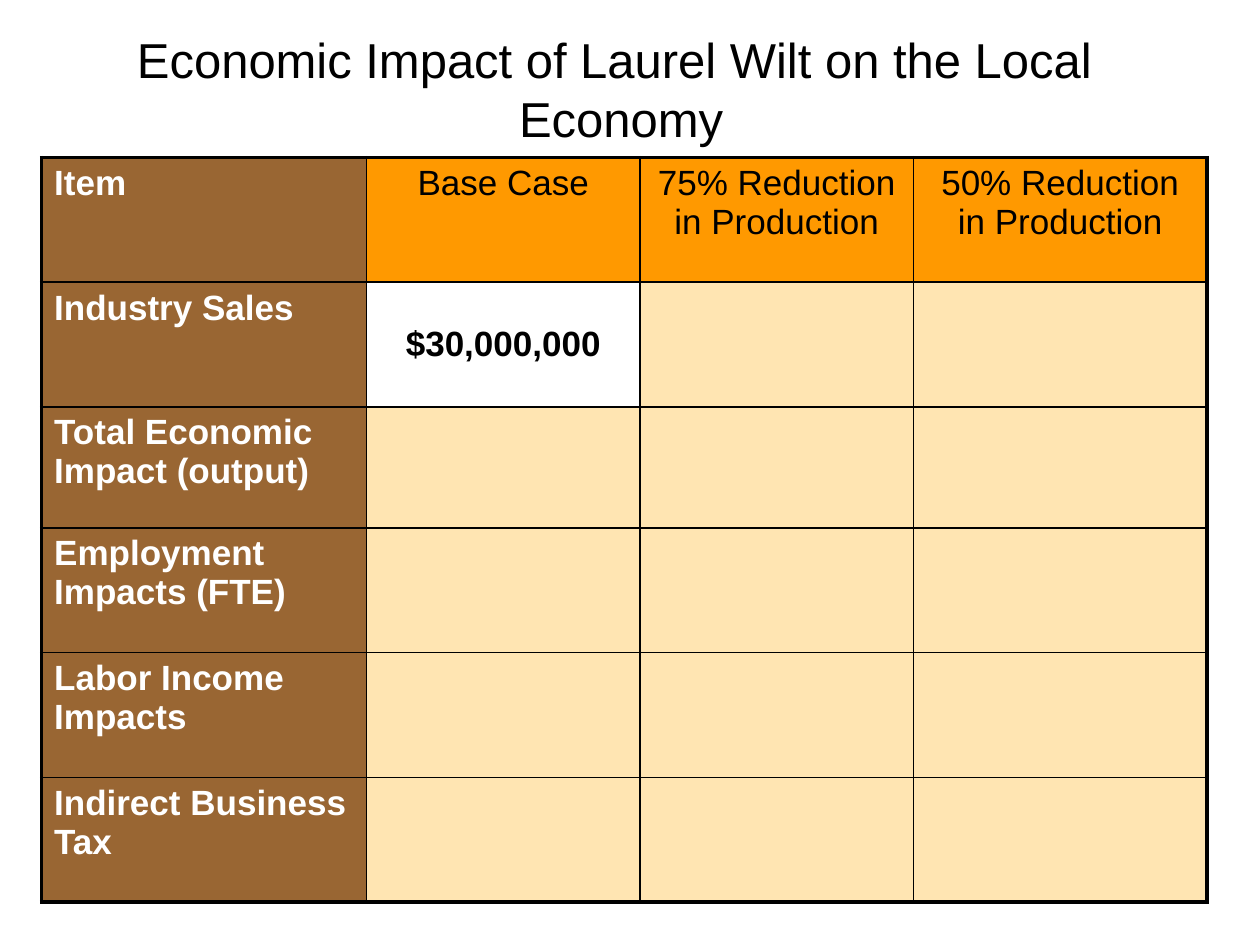
from lxml import etree
from pptx import Presentation
from pptx import util as u
from pptx.dml.color import RGBColor
from pptx.enum import text
from pptx.oxml import ns

BLACK, WHITE = "000000", "FFFFFF"
BROWN, ORANGE, SAND = "996633", "FF9900", "FFCC66"
THIN, THICK = 1, 2.25

HEADERS = ["Item", "Base Case", "75% Reduction in Production",
           "50% Reduction in Production"]
ITEMS = ["Industry Sales", "Total Economic Impact (output)",
         "Employment Impacts (FTE)", "Labor Income Impacts",
         "Indirect Business Tax"]
BASE_SALES = "$30,000,000"
COLUMN_WIDTHS = [2.58, 2.17, 2.17, 2.33]
ROW_HEIGHTS = [0.99, 0.99, 0.96, 0.99, 0.99, 0.99]


def color(value):
    return RGBColor.from_string(value)


class SlideBuilder:
    font_name = "Arial"

    def __init__(self, page):
        self.page = page

    def style(self, para, size, ink, bold=False, centered=True):
        para.alignment = text.PP_ALIGN.CENTER if centered else text.PP_ALIGN.LEFT
        font = para.font
        font.name, font.size, font.bold = self.font_name, u.Pt(size), bold
        font.color.rgb = color(ink)

    def title(self, words, left, top, width, height):
        box = self.page.shapes.title
        box.left, box.top = u.Inches(left), u.Inches(top)
        box.width, box.height = u.Inches(width), u.Inches(height)
        frame = box.text_frame
        frame.text = words
        frame.word_wrap = True
        frame.auto_size = text.MSO_AUTO_SIZE.NONE
        frame.vertical_anchor = text.MSO_ANCHOR.MIDDLE
        self.style(frame.paragraphs[0], 28, BLACK)

    def table(self, left, top, widths, heights):
        frame = self.page.shapes.add_table(
            len(heights), len(widths), u.Inches(left), u.Inches(top),
            u.Inches(sum(widths)), u.Inches(sum(heights)))
        grid = frame.table
        grid.first_row = grid.horz_banding = False
        for column, width in zip(grid.columns, widths):
            column.width = u.Inches(width)
        for row, height in zip(grid.rows, heights):
            row.height = u.Inches(height)
        return grid

    def borders(self, cell, widths):
        properties = cell._tc.get_or_add_tcPr()
        for side, width in widths.items():
            line = etree.SubElement(properties, ns.qn(f"a:ln{side}"),
                                    w=str(u.Pt(width)))
            solid = etree.SubElement(line, ns.qn("a:solidFill"))
            etree.SubElement(solid, ns.qn("a:srgbClr"), val=BLACK)

    def fill(self, cell, shade, opacity=100):
        cell.fill.solid()
        cell.fill.fore_color.rgb = color(shade)
        if opacity < 100:
            tint = cell._tc.tcPr.find(ns.qn("a:solidFill"))[0]
            etree.SubElement(tint, ns.qn("a:alpha"), val=str(opacity * 1000))

    def label(self, cell, words, ink, bold=False, centered=True):
        cell.text = words
        self.style(cell.text_frame.paragraphs[0], 20, ink, bold, centered)


def main():
    deck = Presentation()
    deck.slide_width, deck.slide_height = u.Inches(10), u.Inches(7.5)
    builder = SlideBuilder(deck.slides.add_slide(deck.slide_layouts[5]))
    builder.title("Economic Impact of Laurel Wilt on the Local\v Economy",
                  0, 0.08, 9.75, 1.25)
    grid = builder.table(0.33, 1.25, COLUMN_WIDTHS, ROW_HEIGHTS)

    last_row, last_column = len(ROW_HEIGHTS) - 1, len(COLUMN_WIDTHS) - 1
    for row in range(last_row + 1):
        for column in range(last_column + 1):
            cell = grid.cell(row, column)
            builder.borders(cell, {
                "L": THICK if column == 0 else THIN,
                "R": THICK if column == last_column else THIN,
                "T": THICK if row == 0 else THIN,
                "B": THICK if row == last_row else THIN})
            if column == 0:
                builder.fill(cell, BROWN)
                words = ITEMS[row - 1] if row else HEADERS[0]
                builder.label(cell, words, WHITE, bold=True, centered=False)
            elif row == 0:
                builder.fill(cell, ORANGE)
                builder.label(cell, HEADERS[column], BLACK)
            elif (row, column) == (1, 1):
                builder.fill(cell, WHITE, opacity=50)
                builder.label(cell, BASE_SALES, BLACK, bold=True)
                cell.vertical_anchor = text.MSO_ANCHOR.MIDDLE
            else:
                builder.fill(cell, SAND, opacity=50)

    deck.save("out.pptx")


if __name__ == "__main__":
    main()
